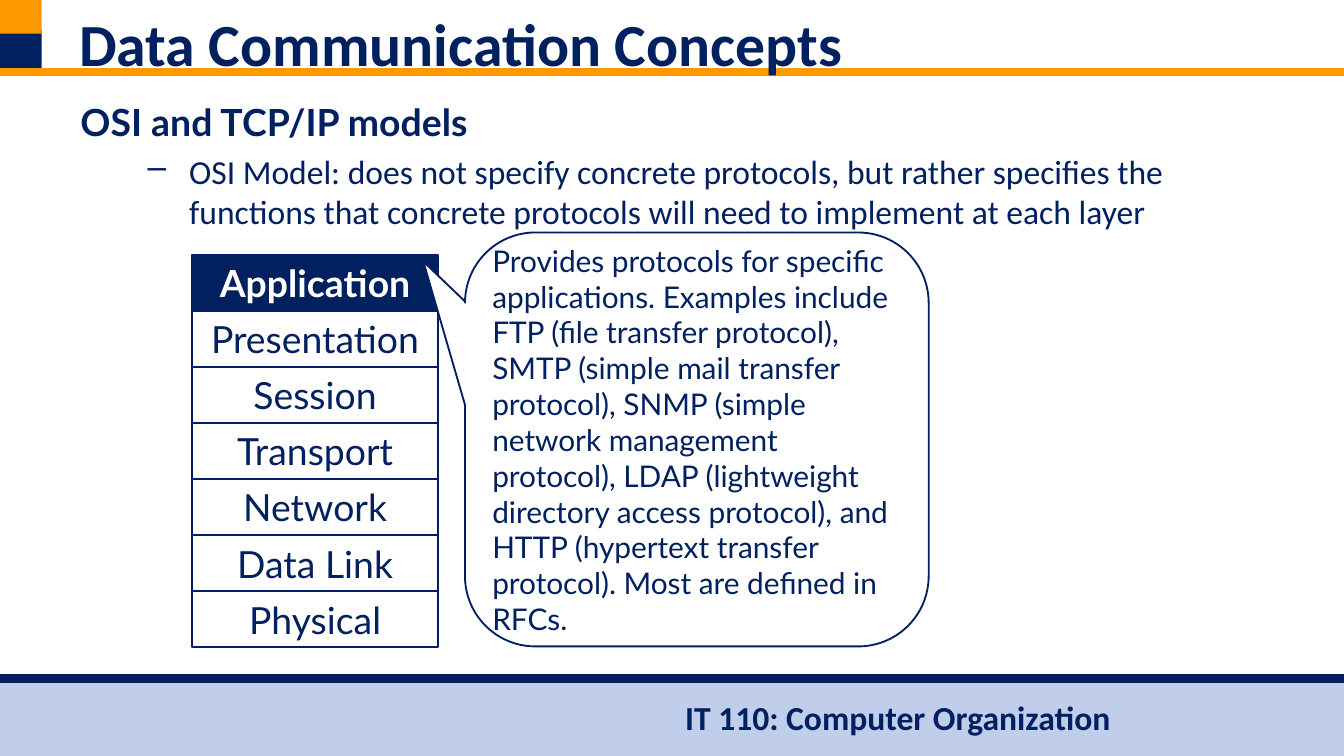
import pptx
import pptx.util
import pptx.dml.color
import pptx.enum.shapes
import pptx.enum.text
import pptx.oxml.ns
from lxml import etree

COLORS = {"navy": "002060", "orange": "FF9900", "pale": "C0CDEB", "white": "FFFFFF"}
SHAPES = pptx.enum.shapes.MSO_SHAPE
ANCHOR = pptx.enum.text.MSO_ANCHOR
ALIGN = pptx.enum.text.PP_ALIGN
COLS, ROWS = 100, 56.25
WIDTH, HEIGHT = pptx.util.Inches(10), pptx.util.Inches(5.625)

LAYERS = ["Application", "Presentation", "Session", "Transport",
          "Network", "Data Link", "Physical"]
LAYER_TOP, LAYER_PITCH = 18.96, 4.17
OSI_TEXT = ("OSI Model: does not specify concrete protocols, but rather specifies "
            "the functions that concrete protocols will need to implement at each layer")
CALLOUT_TEXT = ("Provides protocols for specific applications. Examples include "
                "FTP (file transfer protocol), SMTP (simple mail transfer protocol), "
                "SNMP (simple network management protocol), LDAP (lightweight "
                "directory access protocol), and HTTP (hypertext transfer protocol). "
                "Most are defined in RFCs.")


def rgb(name):
    return pptx.dml.color.RGBColor.from_string(COLORS[name])


def grid(col, row):
    return round(col * WIDTH / COLS), round(row * HEIGHT / ROWS)


def sub(parent, tag, **attrs):
    return etree.SubElement(parent, pptx.oxml.ns.qn(tag), attrs)


class Deck:
    def __init__(self):
        self.prs = pptx.Presentation()
        self.prs.slide_width, self.prs.slide_height = WIDTH, HEIGHT
        self.s = self.prs.slides.add_slide(self.prs.slide_layouts[6])

    def frame(self, sp, anchor=ANCHOR.TOP, side=0.1):
        tf = sp.text_frame
        inset, edge = pptx.util.Inches(side), pptx.util.Inches(0.05)
        values = {"word_wrap": True, "vertical_anchor": anchor,
                  "margin_left": inset, "margin_right": inset,
                  "margin_top": edge, "margin_bottom": edge}
        for name, value in values.items():
            setattr(tf, name, value)
        return tf

    def add_text(self, p, text, size, font="Calibri", bold=False, color="navy",
                 align=ALIGN.LEFT):
        p.alignment = align
        r = p.add_run()
        r.text = text
        values = {"size": pptx.util.Pt(size), "name": font, "bold": bold}
        for name, value in values.items():
            setattr(r.font, name, value)
        r.font.color.rgb = rgb(color)

    def text_box(self, col, row, cols, rows):
        """Add an empty text box and return its text frame."""
        sp = self.s.shapes.add_textbox(*grid(col, row), *grid(cols, rows))
        return self.frame(sp)

    def bullet(self, p, char, left, hang):
        pPr = p._p.get_or_add_pPr()
        pPr.set("marL", str(pptx.util.Inches(left)))
        pPr.set("indent", str(-pptx.util.Inches(hang)))
        sub(sub(pPr, "a:buClr"), "a:srgbClr", val=COLORS["navy"])
        sub(pPr, "a:buChar", char=char)

    def shape(self, kind, col, row, cols, rows, fill=None, line=None):
        """Add a preset shape; line is a width in points."""
        sp = self.s.shapes.add_shape(kind, *grid(col, row), *grid(cols, rows))
        sp.shadow.inherit = False
        if fill:
            sp.fill.solid()
            sp.fill.fore_color.rgb = rgb(fill)
        else:
            sp.fill.background()
        if line:
            sp.line.color.rgb = rgb("navy")
            sp.line.width = pptx.util.Pt(line)
        else:
            sp.line.fill.background()
        return sp

    def rule(self, row, color):
        """Draw a thick line across the slide."""
        cx = self.s.shapes.add_connector(
            pptx.enum.shapes.MSO_CONNECTOR.STRAIGHT, *grid(0, row), *grid(COLS, row))
        cx.line.color.rgb = rgb(color)
        cx.line.width = pptx.util.Pt(4.5)
        sub(cx._element.spPr, "a:effectLst")


def main():
    deck = Deck()

    deck.shape(SHAPES.RECTANGLE, 0, 50.6, COLS, ROWS - 50.6, "pale")
    footer = deck.text_box(50, 51.4, 33.9, 4)
    deck.add_text(footer.paragraphs[0], "IT 110: Computer Organization", 18, bold=True)
    deck.shape(SHAPES.RECTANGLE, 0, 2.2, 3.1, 3.2, "navy")
    deck.rule(5.35, "orange")
    deck.shape(SHAPES.RECTANGLE, 0, 0, 3.1, 2.5, "orange")
    deck.rule(50.5, "navy")

    body = deck.text_box(5, 6.9, 90, 37.1)
    deck.add_text(body.paragraphs[0], "OSI and TCP/IP models", 20, "Lato", bold=True)
    p = body.add_paragraph()
    p.level = 1
    p.space_before = pptx.util.Pt(3.6)
    deck.bullet(p, "–", 0.81, 0.31)
    deck.add_text(p, OSI_TEXT, 18)

    title = deck.text_box(4.9, 0, 90.2, 5.3)
    deck.add_text(title.paragraphs[0], "Data Communication Concepts", 32, bold=True)

    for i, layer in enumerate(LAYERS):
        active = i == 0
        sp = deck.shape(SHAPES.RECTANGLE, 14.3, LAYER_TOP + i * LAYER_PITCH,
                        18.3, LAYER_PITCH, "navy" if active else None, 0.75)
        tf = deck.frame(sp, ANCHOR.MIDDLE)
        deck.add_text(tf.paragraphs[0], layer, 20, "Lato", active,
                      "white" if active else "navy", ALIGN.CENTER)

    callout = deck.shape(SHAPES.ROUNDED_RECTANGULAR_CALLOUT,
                         34.6, 17.3, 34.5, 30.8, "white", 1)
    for i, value in enumerate((-0.59, -0.43, 0.17)):
        callout.adjustments[i] = value
    tf = deck.frame(callout, ANCHOR.MIDDLE, 0.05)
    deck.add_text(tf.paragraphs[0], CALLOUT_TEXT, 16, "Lato")

    deck.prs.save("out.pptx")


if __name__ == "__main__":
    main()
